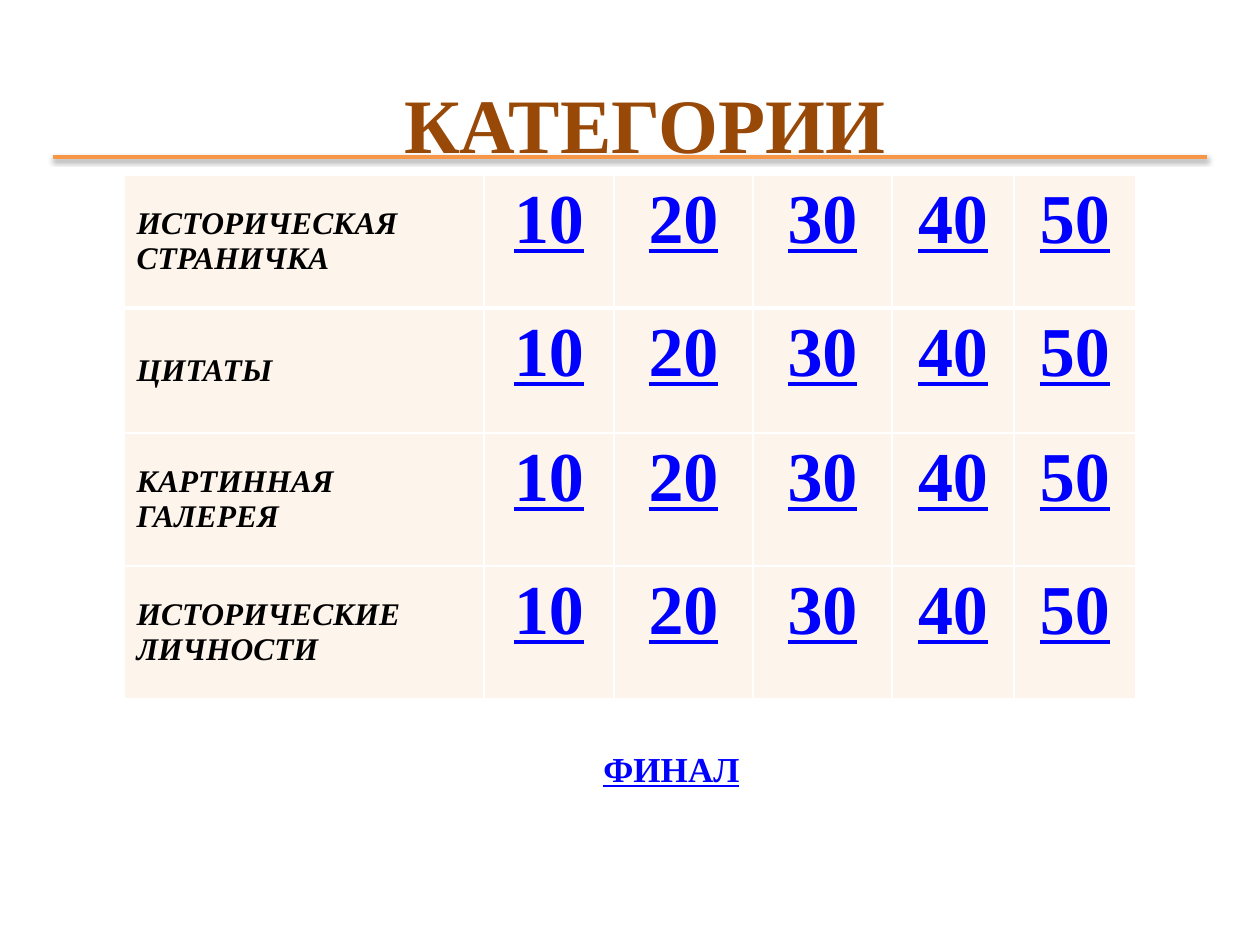
"""Build the quiz board slide with categories, point values and a final round."""
from lxml.etree import SubElement
from pptx import Presentation
from pptx.dml.color import RGBColor
from pptx.enum.shapes import MSO_CONNECTOR
from pptx.enum.text import MSO_ANCHOR, MSO_AUTO_SIZE, PP_ALIGN
from pptx.oxml import parse_xml
from pptx.oxml.ns import nsdecls, qn
from pptx.util import Pt

PX = 914400 / 126
COLORS = {"title": "984807", "rule": "F79646", "cell": "FDEADA",
          "label": "000000", "link": "0000FF", "border": "FFFFFF"}
CATEGORIES = ["ИСТОРИЧЕСКАЯ СТРАНИЧКА", "ЦИТАТЫ", "КАРТИННАЯ ГАЛЕРЕЯ", "ИСТОРИЧЕСКИЕ ЛИЧНОСТИ"]
POINTS = ["10", "20", "30", "40", "50"]
COLUMN_WIDTHS = [360, 130, 139, 139, 122, 122]
ROW_HEIGHTS = [133, 125, 133, 133]


def px(*lengths):
    return [round(length * PX) for length in lengths]


def write(frame, text, size, color, align=PP_ALIGN.LEFT, italic=False, underline=False):
    paragraph = frame.paragraphs[0]
    paragraph.text = text
    paragraph.alignment = align
    font = paragraph.font
    font.name, font.size, font.bold = "Times New Roman", Pt(size), True
    font.italic = italic
    font.color.rgb = RGBColor.from_string(COLORS[color])
    if underline:
        paragraph.runs[0].font.underline = True


deck = Presentation()
deck.slide_width, deck.slide_height = px(1260, 945)
slide = deck.slides.add_slide(deck.slide_layouts[6])

title = slide.shapes.add_textbox(*px(134, 86, 1022, 74)).text_frame
title.word_wrap = True
title.vertical_anchor = MSO_ANCHOR.MIDDLE
write(title, "КАТЕГОРИИ", 44, "title", PP_ALIGN.CENTER)

rule = slide.shapes.add_connector(MSO_CONNECTOR.STRAIGHT, *px(53, 157, 1207, 157))
rule.line.color.rgb = RGBColor.from_string(COLORS["rule"])
rule.line.width = Pt(2)
rule.element.spPr.append(parse_xml(
    f'<a:effectLst {nsdecls("a")}><a:outerShdw blurRad="{Pt(3.1)}" dist="{Pt(1.6)}" '
    'dir="5400000" rotWithShape="0"><a:srgbClr val="000000"><a:alpha val="38000"/>'
    '</a:srgbClr></a:outerShdw></a:effectLst>'))

board = slide.shapes.add_table(len(CATEGORIES), len(COLUMN_WIDTHS),
                               *px(124, 175, sum(COLUMN_WIDTHS), sum(ROW_HEIGHTS))).table
board.first_row = board.horz_banding = False
for column, width in zip(board.columns, px(*COLUMN_WIDTHS)):
    column.width = width
for row, height in zip(board.rows, px(*ROW_HEIGHTS)):
    row.height = height

for row_index, category in enumerate(CATEGORIES):
    for column_index, text in enumerate([category] + POINTS):
        cell = board.cell(row_index, column_index)
        if column_index == 0:
            cell.vertical_anchor = MSO_ANCHOR.MIDDLE
            write(cell.text_frame, text, 18, "label", italic=True)
        else:
            write(cell.text_frame, text, 40, "link", PP_ALIGN.CENTER, underline=True)
        cell.fill.solid()
        cell.fill.fore_color.rgb = RGBColor.from_string(COLORS["cell"])
        properties = cell._tc.get_or_add_tcPr()
        SubElement(properties.find(".//" + qn("a:srgbClr")), qn("a:alpha"), val="50000")
        border_widths = {"L": 1, "R": 1, "T": 3 if row_index == 1 else 1,
                         "B": 3 if row_index == 0 else 1}
        for position, (side, width) in enumerate(border_widths.items()):
            properties.insert(position, parse_xml(
                f'<a:ln{side} {nsdecls("a")} w="{Pt(width)}"><a:solidFill>'
                f'<a:srgbClr val="{COLORS["border"]}"/></a:solidFill></a:ln{side}>'))

final_round = slide.shapes.add_textbox(*px(591, 741, 162, 55)).text_frame
final_round.word_wrap = False
final_round.auto_size = MSO_AUTO_SIZE.SHAPE_TO_FIT_TEXT
write(final_round, "ФИНАЛ", 20, "link", underline=True)

deck.save("out.pptx")
